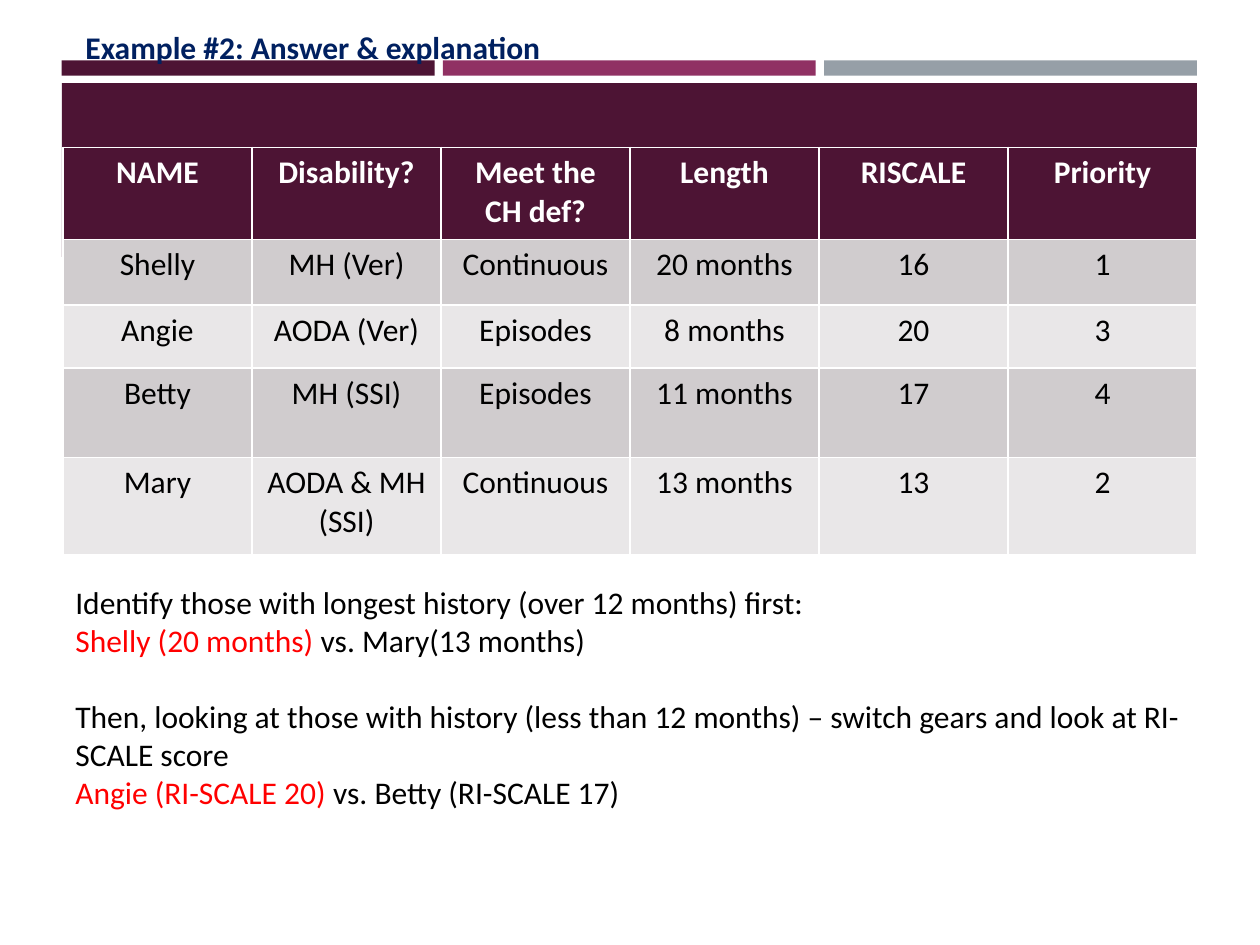
from pptx import Presentation
from pptx.dml.color import RGBColor
from pptx.enum.shapes import MSO_SHAPE
from pptx.enum.text import PP_ALIGN
from pptx.util import Inches, Pt

COLORS = {
    "plum": "4D1434",
    "magenta": "903163",
    "gray": "969FA7",
    "band_dark": "D0CCCE",
    "band_light": "E9E7E8",
    "navy": "002060",
    "red": "FF0000",
    "black": "000000",
    "white": "FFFFFF",
}
BASE_FONT = {"name": "Calibri", "size": Pt(18)}

CLIENTS = [
    ["NAME", "Disability?", "Meet the CH def?", "Length", "RISCALE", "Priority"],
    ["Shelly", "MH (Ver)", "Continuous", "20 months", "16", "1"],
    ["Angie", "AODA (Ver)", "Episodes", "8 months", "20", "3"],
    ["Betty", "MH (SSI)", "Episodes", "11 months", "17", "4"],
    ["Mary", "AODA & MH (SSI)", "Continuous", "13 months", "13", "2"],
]
ROW_HEIGHTS = [0.73, 0.52, 0.5, 0.71, 0.77]
COLUMN_WIDTH = 1.5

EXPLANATION = [
    [("Identify those with longest history (over 12 months) first:", "black")],
    [("Shelly (20 months) ", "red"), ("vs. Mary(13 months)", "black")],
    [("Then, looking at those with history (less than 12 months) – "
      "switch gears and look at RI-SCALE score", "black")],
    [("Angie (RI-SCALE 20) ", "red"), ("vs. Betty (RI-SCALE 17)", "black")],
]


def rgb(color):
    return RGBColor.from_string(COLORS[color])


def add_run(paragraph, text, color, bold=False):
    run = paragraph.add_run()
    run.text = text
    for attribute, value in {**BASE_FONT, "bold": bold}.items():
        setattr(run.font, attribute, value)
    run.font.color.rgb = rgb(color)


def add_bar(slide, left, top, width, height, color):
    bar = slide.shapes.add_shape(
        MSO_SHAPE.RECTANGLE, Inches(left), Inches(top), Inches(width), Inches(height)
    )
    bar.shadow.inherit = False
    bar.fill.solid()
    bar.fill.fore_color.rgb = rgb(color)
    bar.line.fill.background()


def add_client_table(slide, left, top):
    columns = len(CLIENTS[0])
    clients = slide.shapes.add_table(
        len(CLIENTS), columns, Inches(left), Inches(top),
        Inches(columns * COLUMN_WIDTH), Inches(sum(ROW_HEIGHTS)),
    ).table
    for column in clients.columns:
        column.width = Inches(COLUMN_WIDTH)
    for index, (entries, height) in enumerate(zip(CLIENTS, ROW_HEIGHTS)):
        header = index == 0
        band = "plum" if header else ("band_light", "band_dark")[index % 2]
        clients.rows[index].height = Inches(height)
        for cell, entry in zip(clients.rows[index].cells, entries):
            cell.fill.solid()
            cell.fill.fore_color.rgb = rgb(band)
            paragraph = cell.text_frame.paragraphs[0]
            paragraph.alignment = PP_ALIGN.CENTER
            add_run(paragraph, entry, "white" if header else "black", header)


def add_text(slide, left, top, width, height, lines, bold=False):
    frame = slide.shapes.add_textbox(
        Inches(left), Inches(top), Inches(width), Inches(height)
    ).text_frame
    frame.word_wrap = True
    for index, line in enumerate(lines):
        paragraph = frame.add_paragraph() if index else frame.paragraphs[0]
        for text, color in line:
            add_run(paragraph, text, color, bold)
    return frame


def main():
    presentation = Presentation()
    presentation.slide_width = Inches(10)
    presentation.slide_height = Inches(7.5)
    slide = presentation.slides.add_slide(presentation.slide_layouts[6])

    for index, color in enumerate(["plum", "magenta", "gray"]):
        add_bar(slide, 0.49 + index * 3.025, 0.48, 2.96, 0.12, color)
    add_bar(slide, 0.49, 0.66, 9.01, 1.38, "plum")
    add_client_table(slide, 0.5, 1.17)

    title = [[("Example #2: Answer & explanation", "navy")]]
    add_text(slide, 0.58, 0.17, 5.67, 0.4, title, bold=True)
    explanation = add_text(slide, 0.5, 4.58, 9.17, 1.92, EXPLANATION)
    explanation.paragraphs[2].space_before = Pt(22)

    presentation.save("out.pptx")


if __name__ == "__main__":
    main()
